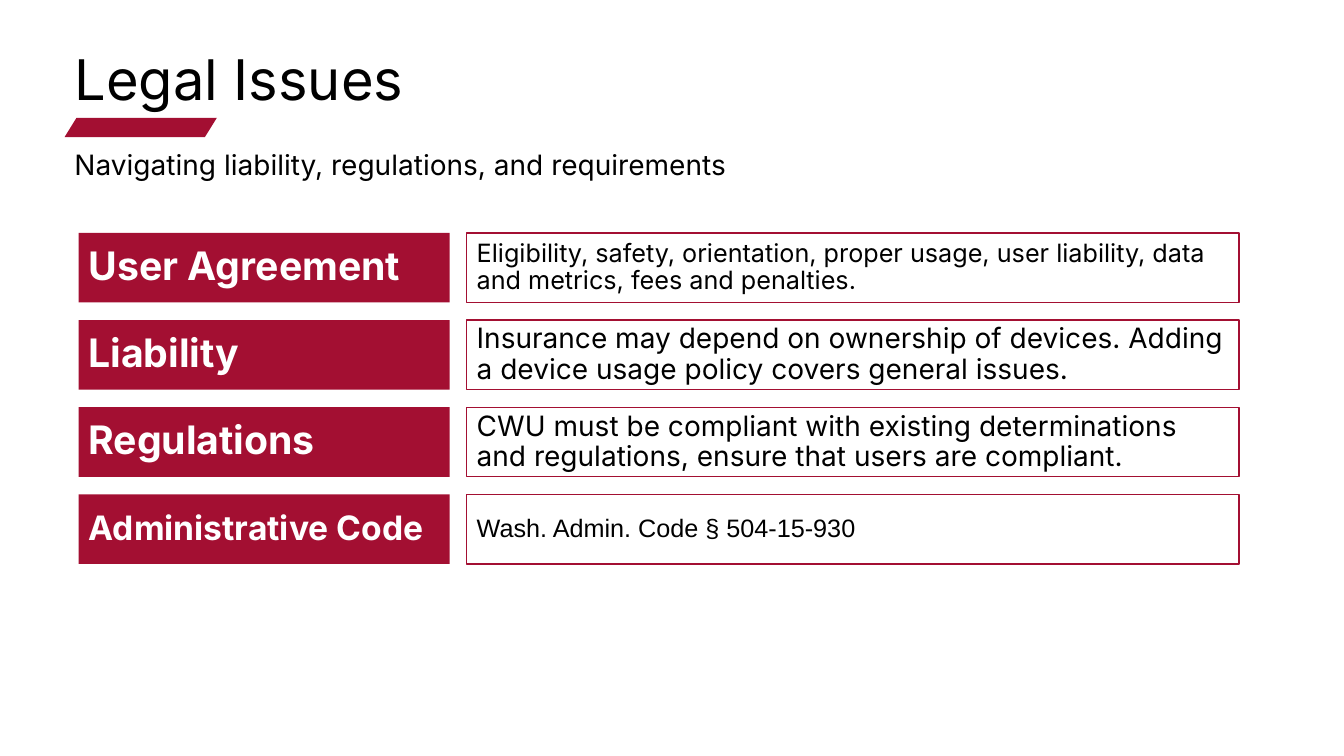
"""Build the Legal Issues slide."""
from pptx import Presentation
from pptx.dml.color import RGBColor
from pptx.enum.shapes import MSO_SHAPE as Kind
from pptx.enum.text import MSO_ANCHOR as Anchor, MSO_AUTO_SIZE as Fit, PP_ALIGN as Align
from pptx.util import Inches, Pt

TITLE = "Legal Issues"
LEAD = "Navigating liability, regulations, and requirements"
ROWS = [
    ("User Agreement", 28,
     "Eligibility, safety, orientation, proper usage, user liability, "
     "data and metrics, fees and penalties.", 18, "Inter"),
    ("Liability", 28,
     "Insurance may depend on ownership of devices. "
     "Adding a device usage policy covers general issues.", 20, "Inter"),
    ("Regulations", 28,
     "CWU must be compliant with existing determinations and regulations, "
     "ensure that users are compliant.", 20, "Inter"),
    ("Administrative Code", 24, "Wash. Admin. Code § 504-15-930", 18, "Arial"),
]
RED, WHITE, BLACK = "A30F32", "FFFFFF", "000000"
TOP, STEP, HIGH = 2.31, 0.865, 0.69


def color(code):
    return RGBColor.from_string(code)


def write(shape, text, size, font="Inter", ink=BLACK, bold=False, anchor=Anchor.TOP):
    frame = shape.text_frame
    frame.word_wrap = True
    frame.auto_size = Fit.NONE
    frame.vertical_anchor = anchor
    para = frame.paragraphs[0]
    para.text = text
    para.alignment = Align.LEFT
    para.line_spacing = 0.9
    para.font.size = Pt(size)
    para.font.name = font
    para.font.bold = bold
    para.font.color.rgb = color(ink)


def draw(slide, kind, box, fill, line=None):
    shape = slide.shapes.add_shape(kind, *map(Inches, box))
    shape.shadow.inherit = False
    shape.fill.solid()
    shape.fill.fore_color.rgb = color(fill)
    if line:
        shape.line.color.rgb = color(line)
        shape.line.width = Pt(1)
    else:
        shape.line.fill.background()
    return shape


def main():
    deck = Presentation()
    deck.slide_width, deck.slide_height = Inches(13.33), Inches(7.5)
    slide = deck.slides.add_slide(deck.slide_layouts[5])

    title = slide.shapes.title
    title.left, title.top = Inches(0.64), Inches(0.47)
    title.width, title.height = Inches(12.16), Inches(0.55)
    write(title, TITLE, 40)

    accent = draw(slide, Kind.PARALLELOGRAM, (0.64, 1.17, 1.51, 0.19), RED)
    accent.adjustments[0] = 0.62

    lead = slide.shapes.add_textbox(*map(Inches, (0.64, 1.45, 12.07, 0.39)))
    write(lead, LEAD, 20)

    for i, (name, big, text, size, font) in enumerate(ROWS):
        top = TOP + i * STEP
        label = draw(slide, Kind.RECTANGLE, (0.78, top, 3.68, HIGH), RED)
        write(label, name, big, ink=WHITE, bold=True, anchor=Anchor.MIDDLE)
        detail = draw(slide, Kind.RECTANGLE, (4.63, top, 7.66, HIGH), WHITE, RED)
        write(detail, text, size, font, anchor=Anchor.MIDDLE)

    deck.save("out.pptx")


if __name__ == "__main__":
    main()
